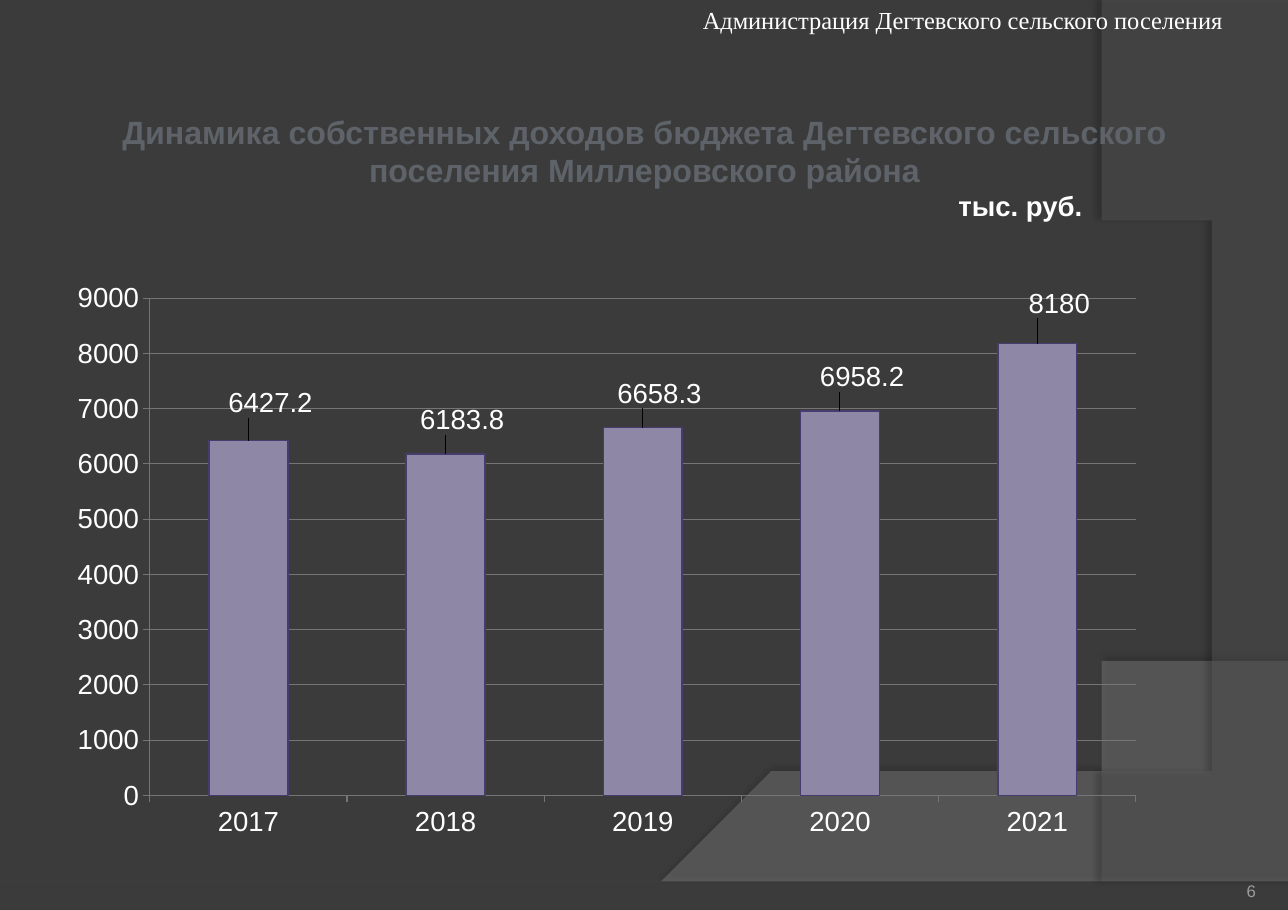
from dataclasses import dataclass
from typing import Any

from lxml import etree
from pptx import Presentation
from pptx import util as u
from pptx.chart import data
from pptx.dml import color
from pptx.enum import chart as ch
from pptx.enum import text
from pptx.oxml import ns


@dataclass(frozen=True)
class Theme:
    back: str = "3B3B3B"
    low: str = "7F7F7F"
    side: str = "5E5E5E"
    bar: str = "8E88A6"
    edge: str = "463C6E"
    grid: str = "757575"
    head: str = "5E636A"
    white: str = "FFFFFF"
    mute: str = "9D9B9A"
    sans: str = "Arial"
    serif: str = "Times New Roman"
    title: int = 21
    body: int = 18
    top: int = 16
    page: int = 11


@dataclass(frozen=True)
class Wave:
    lead: list
    curve: list
    fill: str
    alpha: int
    shade: int
    dist: float
    angle: int


@dataclass(frozen=True)
class Bar:
    year: str
    value: float
    dx: float
    dy: float


T = Theme()
WIDE, HIGH = 11.69, 8.26
WAVES = [
    Wave([(0, HIGH), (WIDE, HIGH)],
         [(WIDE, 5.73), (6.54, 8.03), (4.57, 7.92), (0, 7.77)],
         T.low, 45, 35, 3.5, 270),
    Wave([(WIDE, 0.02), (WIDE, HIGH)],
         [(9.6, HIGH), (10.93, 6.82), (11.9, 3.31), (9.36, 0)],
         T.side, 40, 45, 4, 180),
]
BARS = [
    Bar("2017", 6427.2, 0.02, -0.03),
    Bar("2018", 6183.8, 0.015, -0.025),
    Bar("2019", 6658.3, 0.015, -0.025),
    Bar("2020", 6958.2, 0.02, -0.025),
    Bar("2021", 8180, 0.02, -0.035),
]


def rgb(code: str) -> color.RGBColor:
    return color.RGBColor.from_string(code)


def sub(node: Any, tag: str, **attrs: Any) -> Any:
    return etree.SubElement(node, ns.qn(tag), {k: str(v) for k, v in attrs.items()})


def bend(pts: list, steps: int = 60) -> list:
    """Return points along a cubic curve."""
    out = []
    for i in range(steps + 1):
        t = i / steps
        mix = ((1 - t) ** 3, 3 * t * (1 - t) ** 2, 3 * t * t * (1 - t), t ** 3)
        out.append(tuple(sum(m * p[k] for m, p in zip(mix, pts)) for k in (0, 1)))
    return out


def draw_wave(slide: Any, wave: Wave) -> None:
    first, *rest = wave.lead + bend(wave.curve)
    form = slide.shapes.build_freeform(*first, scale=float(u.Inches(1)))
    form.add_line_segments(rest, close=True)
    shape = form.convert_to_shape()
    shape.fill.solid()
    shape.fill.fore_color.rgb = rgb(wave.fill)
    shape.line.fill.background()
    shape.shadow.inherit = False
    props = shape.element.spPr
    tint = props.find(ns.qn("a:solidFill"))[0]
    sub(tint, "a:alpha", val=wave.alpha * 1000)
    glow = sub(props.find(ns.qn("a:effectLst")), "a:outerShdw",
               blurRad=u.Pt(4), dist=u.Pt(wave.dist), dir=wave.angle * 60000,
               algn="ctr", rotWithShape=0)
    sub(sub(glow, "a:srgbClr", val="000000"), "a:alpha", val=wave.shade * 1000)


def add_box(slide: Any, x: float, y: float, w: float, h: float, pad: bool = True) -> Any:
    frame = slide.shapes.add_textbox(*map(u.Inches, (x, y, w, h))).text_frame
    frame.word_wrap = True
    if not pad:
        frame.margin_left = frame.margin_right = 0
        frame.margin_top = frame.margin_bottom = 0
    return frame


def put(para: Any, words: str, *, size: int, tint: str, face: str = T.sans,
        bold: bool = False, align: Any = text.PP_ALIGN.LEFT, indent: float = 0) -> None:
    """Write one formatted run into a paragraph."""
    run = para.add_run()
    run.text = words
    run.font.size, run.font.name, run.font.bold = u.Pt(size), face, bold
    run.font.color.rgb = rgb(tint)
    para.alignment = align
    if indent:
        para._p.get_or_add_pPr().set("marL", str(u.Inches(indent)))


def place(node: Any, **vals: Any) -> None:
    """Fill a chart layout element with manual values."""
    spot = sub(node, "c:manualLayout")
    for key, val in vals.items():
        sub(spot, f"c:{key}", val=val)


def draw_chart(slide: Any) -> None:
    feed = data.CategoryChartData()
    feed.categories = [b.year for b in BARS]
    feed.add_series("Series 1", [b.value for b in BARS])
    area = map(u.Inches, (0.51, 2.47, 10, 5.25))
    chart = slide.shapes.add_chart(ch.XL_CHART_TYPE.COLUMN_CLUSTERED, *area, feed).chart
    chart.has_legend = chart.has_title = False
    chart.font.size, chart.font.name = u.Pt(T.body), T.sans
    chart.font.color.rgb = rgb(T.white)
    plot = chart.plots[0]
    plot.gap_width, plot.vary_by_categories = 150, False
    row = plot.series[0]
    row.format.fill.solid()
    row.format.fill.fore_color.rgb = rgb(T.bar)
    row.format.line.color.rgb = rgb(T.edge)
    row.format.line.width = u.Pt(1)
    for i in range(len(BARS)):
        row.points[i].data_label.position = ch.XL_LABEL_POSITION.OUTSIDE_END
    root = chart._chartSpace
    for label, bar in zip(root.xpath(".//c:dLbl"), BARS):
        spot = etree.Element(ns.qn("c:layout"))
        place(spot, x=bar.dx, y=bar.dy)
        label.insert(1, spot)
    zone = root.xpath(".//c:plotArea")[0]
    for old in zone.findall(ns.qn("c:layout")):
        zone.remove(old)
    spot = etree.Element(ns.qn("c:layout"))
    place(spot, layoutTarget="inner", xMode="edge", yMode="edge",
          x=0.085, y=0.045, w=0.895, h=0.86)
    zone.insert(0, spot)
    val = chart.value_axis
    val.minimum_scale, val.maximum_scale, val.major_unit = 0, 9000, 1000
    val.has_major_gridlines = True
    val.tick_labels.number_format = "General"
    val.tick_labels.number_format_is_linked = False
    for axis in (val, chart.category_axis):
        axis.major_tick_mark = ch.XL_TICK_MARK.OUTSIDE
    for part in (val, chart.category_axis, val.major_gridlines):
        part.format.line.color.rgb = rgb(T.grid)
        part.format.line.width = u.Pt(0.75)


def main() -> None:
    deck = Presentation()
    deck.slide_width, deck.slide_height = u.Inches(WIDE), u.Inches(HIGH)
    slide = deck.slides.add_slide(deck.slide_layouts[6])
    slide.background.fill.solid()
    slide.background.fill.fore_color.rgb = rgb(T.back)
    for wave in WAVES:
        draw_wave(slide, wave)
    draw_chart(slide)
    head = add_box(slide, 0.6, 0.97, 10.5, 1.16)
    put(head.paragraphs[0],
        "Динамика собственных доходов бюджета Дегтевского сельского "
        "поселения Миллеровского района",
        size=T.title, tint=T.head, bold=True, align=text.PP_ALIGN.CENTER)
    put(head.add_paragraph(), "тыс. руб.", size=T.body, tint=T.white,
        bold=True, indent=8)
    page = add_box(slide, 10.43, 7.74, 0.97, 0.44, pad=False)
    page.vertical_anchor = text.MSO_ANCHOR.BOTTOM
    put(page.paragraphs[0], "6", size=T.page, tint=T.mute, align=text.PP_ALIGN.RIGHT)
    top = add_box(slide, 6.28, 0, 5.41, 0.37)
    put(top.paragraphs[0], "Администрация Дегтевского сельского поселения",
        size=T.top, tint=T.white, face=T.serif)
    deck.save("out.pptx")


if __name__ == "__main__":
    main()
